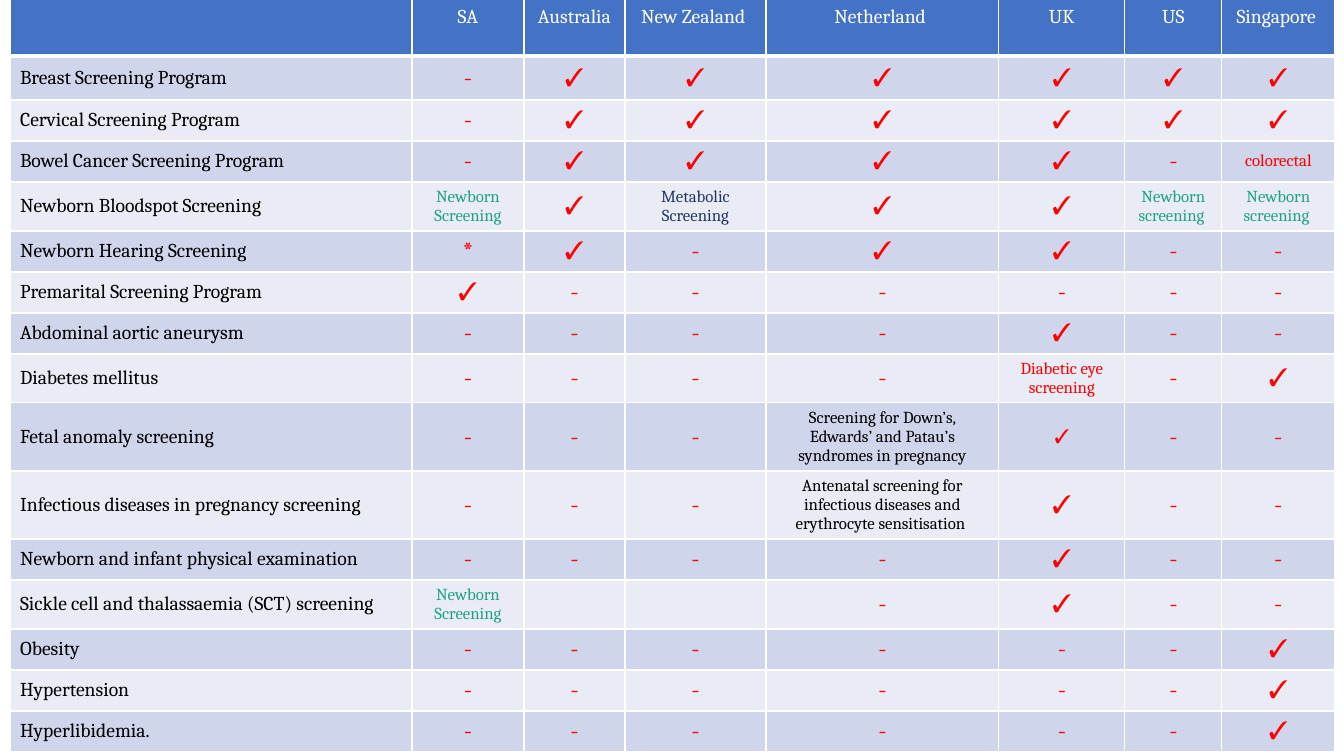
from pptx import Presentation
from pptx.dml.color import RGBColor as RGB
from pptx.enum.text import MSO_ANCHOR as Anchor, PP_ALIGN as Align
from pptx.oxml import parse_xml
from pptx.oxml.ns import nsdecls
from pptx.util import Pt

# Content: a short code in a row stands for a longer note
HEAD = ["", "SA", "Australia", "New Zealand ", "Netherland ", "UK", "US", "Singapore "]
ROWS = [
    ("Breast Screening Program", "- ✓ ✓ ✓ ✓ ✓ ✓"),
    ("Cervical Screening Program", "- ✓ ✓ ✓ ✓ ✓ ✓"),
    ("Bowel Cancer Screening Program", "- ✓ ✓ ✓ ✓ - bowel"),
    ("Newborn Bloodspot Screening", "baby ✓ meta ✓ ✓ born born"),
    ("Newborn Hearing Screening", "* ✓ - ✓ ✓ - -"),
    ("Premarital Screening Program", "✓ - - - - - -"),
    ("Abdominal aortic aneurysm", "- - - - ✓ - -"),
    ("Diabetes mellitus", "- - - - eye - ✓"),
    ("Fetal anomaly screening", "- - - down tick - -"),
    ("Infectious diseases in pregnancy screening", "- - - ante ✓ - -"),
    ("Newborn and infant physical examination", "- - - - ✓ - -"),
    ("Sickle cell and thalassaemia (SCT) screening", "baby none none - ✓ - -"),
    ("Obesity", "- - - - - - ✓"),
    ("Hypertension", "- - - - - - ✓"),
    ("Hyperlibidemia.", "- - - - - - ✓"),
]
# Code: text, size, colour
NOTES = {
    "baby": ("Newborn Screening", 12, "green"),
    "born": ("Newborn screening ", 12, "green"),
    "meta": ("Metabolic Screening", 12, "navy"),
    "bowel": ("colorectal", 12, "red"),
    "eye": ("Diabetic eye screening", 12, "red"),
    "down": ("Screening for Down’s, Edwards’ and Patau’s syndromes in pregnancy", 12, "black"),
    "ante": ("Antenatal screening for infectious diseases and erythrocyte sensitisation ", 12, "black"),
    "tick": ("✓", 14, "red"),
    "none": ("", 14, "red"),
}
COLORS = {
    "head": "4472C4", "odd": "CFD5EA", "even": "E9EBF5", "white": "FFFFFF",
    "black": "000000", "red": "FF0000", "green": "21A481", "navy": "203864",
}

# Layout in px
PX = 914400 / 100.8
LEFT, TOP = 10, -21
COLS = [402, 112, 101, 141, 233, 126, 97, 113]
LINES = {3: 49, 7: 49, 8: 68, 9: 68, 11: 49, 0: 44}  # rows taller than usual
TALL = [77] + [LINES.get(i, 41) for i in range(len(ROWS))]


def emu(px):
    return round(px * PX)


def color(name):
    return RGB.from_string(COLORS[name])


def edge(cell, side, width):
    cell._tc.get_or_add_tcPr().append(parse_xml(
        f'<a:ln{side} {nsdecls("a")} w="{Pt(width)}"><a:solidFill>'
        f'<a:srgbClr val="{COLORS["white"]}"/></a:solidFill></a:ln{side}>'))


def put(cell, text, size, ink, fill, align, sides):
    for side, width in sides.items():
        edge(cell, side, width)
    cell.fill.solid()
    cell.fill.fore_color.rgb = color(fill)
    cell.vertical_anchor = Anchor.MIDDLE
    para = cell.text_frame.paragraphs[0]
    para.alignment = align
    if not text:
        para.font.size = Pt(size)
        return
    run = para.add_run()
    run.text = text
    look = {"name": "Cambria", "size": Pt(size), "bold": False}
    for key, value in look.items():
        setattr(run.font, key, value)
    run.font.color.rgb = color(ink)


deck = Presentation()
deck.slide_width, deck.slide_height = emu(1344), emu(756)
slide = deck.slides.add_slide(deck.slide_layouts[6])

# Table grid
table = slide.shapes.add_table(
    len(TALL), len(COLS), emu(LEFT), emu(TOP), emu(sum(COLS)), emu(sum(TALL))).table
for col, width in zip(table.columns, COLS):
    col.width = emu(width)
for row, height in zip(table.rows, TALL):
    row.height = emu(height)

# Header row
for c, name in enumerate(HEAD):
    put(table.cell(0, c), name, 14, "white", "head", Align.CENTER,
        {"L": 1, "R": 1, "T": 1, "B": 3})

# Screening rows
for r, (name, marks) in enumerate(ROWS, 1):
    fill = "odd" if r % 2 else "even"
    sides = {"L": 1, "R": 1, "T": 3 if r == 1 else 1, "B": 1}
    put(table.cell(r, 0), name, 14, "black", fill, Align.LEFT, sides)
    for c, mark in enumerate(marks.split(), 1):
        note = NOTES.get(mark, (mark, 18, "red"))
        put(table.cell(r, c), *note, fill, Align.CENTER, sides)

deck.save("out.pptx")
